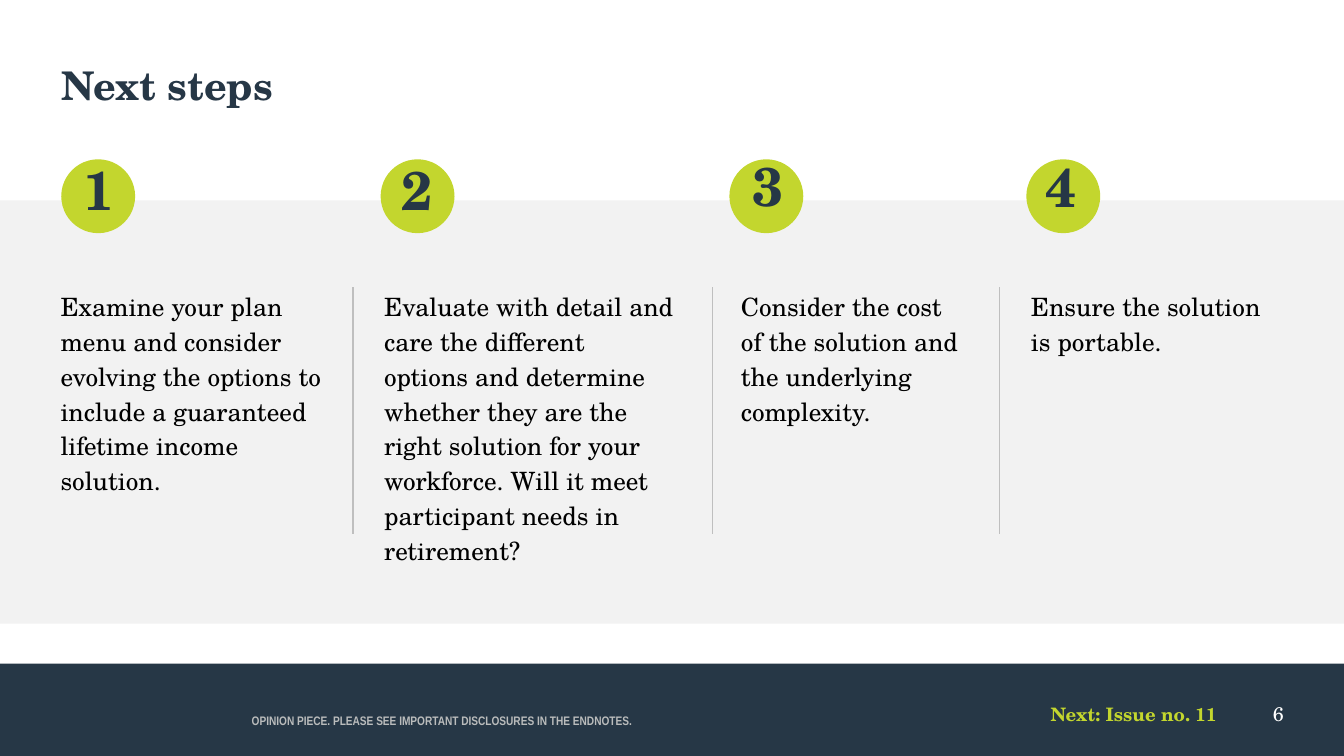
from dataclasses import dataclass

from pptx import Presentation
from pptx.dml.color import RGBColor
from pptx.enum.shapes import MSO_CONNECTOR as Connector, MSO_SHAPE as Shape
from pptx.enum.text import MSO_ANCHOR as Anchor, PP_ALIGN as Align
from pptx.oxml.ns import qn
from pptx.util import Cm, Pt
from lxml.etree import SubElement


@dataclass(frozen=True)
class Theme:
    serif: str = "TeX Gyre Schola"
    narrow: str = "Arial Narrow"
    navy: str = "263746"
    lime: str = "C3D62E"
    band: str = "F2F2F2"
    divider: str = "BFBFBF"
    muted: str = "BABCBC"
    white: str = "FFFFFF"
    black: str = "000000"
    title: float = 32
    number: float = 44
    body: float = 20.4
    page: float = 16
    issue: float = 15
    disclaimer: float = 10


THEME = Theme()
SLIDE_WIDTH, SLIDE_HEIGHT = 38.38, 21.59
BADGE_TOP, BADGE_SIZE = 4.55, 2.11
TEXT_TOP, DIVIDER_BOTTOM = 8.2, 15.24
DIVIDERS = (10.08, 20.35, 28.55)

# badge left, number (left, top), text (left, width, height), text
STEPS = (
    (1.75, (2.39, 4.47), (1.73, 7.52, 8.84),
     "Examine your plan menu and consider evolving the options to include "
     "a guaranteed lifetime income solution."),
    (10.87, (11.48, 4.47), (10.97, 8.26, 10.19),
     "Evaluate with detail and care the different options and determine "
     "whether they are the right solution for your workforce. Will it meet "
     "participant needs in retirement?"),
    (20.83, (21.49, 4.34), (21.16, 6.22, 6.71),
     "Consider the cost of the solution and the underlying complexity."),
    (29.31, (29.87, 4.37), (29.44, 6.91, 5.97),
     "Ensure the solution is portable."),
)


def add_filled(slide, kind, left, top, width, height, color):
    shape = slide.shapes.add_shape(kind, Cm(left), Cm(top), Cm(width), Cm(height))
    shape.shadow.inherit = False
    shape.fill.solid()
    shape.fill.fore_color.rgb = RGBColor.from_string(color)
    shape.line.fill.background()


def add_text(slide, text, left, top, width, height, size, color, bold=False,
             font=THEME.serif, align=Align.LEFT, anchor=Anchor.TOP,
             line_spacing=1.0, space_after=0):
    box = slide.shapes.add_textbox(Cm(left), Cm(top), Cm(width), Cm(height))
    frame = box.text_frame
    frame.word_wrap = True
    frame.vertical_anchor = anchor
    frame.margin_left = frame.margin_right = 0
    frame.margin_top = frame.margin_bottom = 0
    paragraph = frame.paragraphs[0]
    paragraph.text = text
    paragraph.alignment = align
    paragraph.line_spacing = line_spacing
    paragraph.space_after = Pt(space_after)
    paragraph.font.name = font
    paragraph.font.size = Pt(size)
    paragraph.font.bold = bold
    paragraph.font.color.rgb = RGBColor.from_string(color)


def add_divider(slide, x):
    line = slide.shapes.add_connector(
        Connector.STRAIGHT, Cm(x), Cm(TEXT_TOP), Cm(x), Cm(DIVIDER_BOTTOM))
    line.line.color.rgb = RGBColor.from_string(THEME.divider)
    line.line.width = Pt(1)
    SubElement(line._element.spPr, qn("a:effectLst"))


def add_footer(slide):
    top = 18.95
    add_filled(slide, Shape.RECTANGLE, 0, top, SLIDE_WIDTH, SLIDE_HEIGHT - top,
               THEME.navy)
    add_text(slide, "6", 35.64, 20.04, 1.02, 0.84, THEME.page, THEME.white,
             align=Align.RIGHT)
    add_text(slide, "OPINION PIECE. PLEASE SEE IMPORTANT DISCLOSURES IN THE ENDNOTES.",
             7.19, 19.71, 11.43, 1.07, THEME.disclaimer, THEME.muted, bold=True,
             font=THEME.narrow, anchor=Anchor.BOTTOM, space_after=4.3)
    add_text(slide, "Next: Issue no. 11", 19.05, 20.07, 15.7, 1.07, THEME.issue,
             THEME.lime, bold=True, align=Align.RIGHT)


def add_step(slide, number, badge_left, number_at, text_box, text):
    add_filled(slide, Shape.OVAL, badge_left, BADGE_TOP, BADGE_SIZE, BADGE_SIZE,
               THEME.lime)
    add_text(slide, str(number), *number_at, 1.37, 2.34, THEME.number, THEME.navy,
             bold=True, space_after=6)
    left, width, height = text_box
    add_text(slide, text, left, TEXT_TOP, width, height, THEME.body, THEME.black,
             line_spacing=1.15)


def main():
    presentation = Presentation()
    presentation.slide_width = Cm(SLIDE_WIDTH)
    presentation.slide_height = Cm(SLIDE_HEIGHT)
    slide = presentation.slides.add_slide(presentation.slide_layouts[6])

    add_footer(slide)
    add_filled(slide, Shape.RECTANGLE, 0, 5.72, SLIDE_WIDTH, 12.09, THEME.band)
    add_text(slide, "Next steps", 1.75, 1.75, 34.9, 2.87, THEME.title, THEME.navy,
             bold=True)
    for number, step in enumerate(STEPS, start=1):
        add_step(slide, number, *step)
    for x in DIVIDERS:
        add_divider(slide, x)

    presentation.save("out.pptx")


if __name__ == "__main__":
    main()
